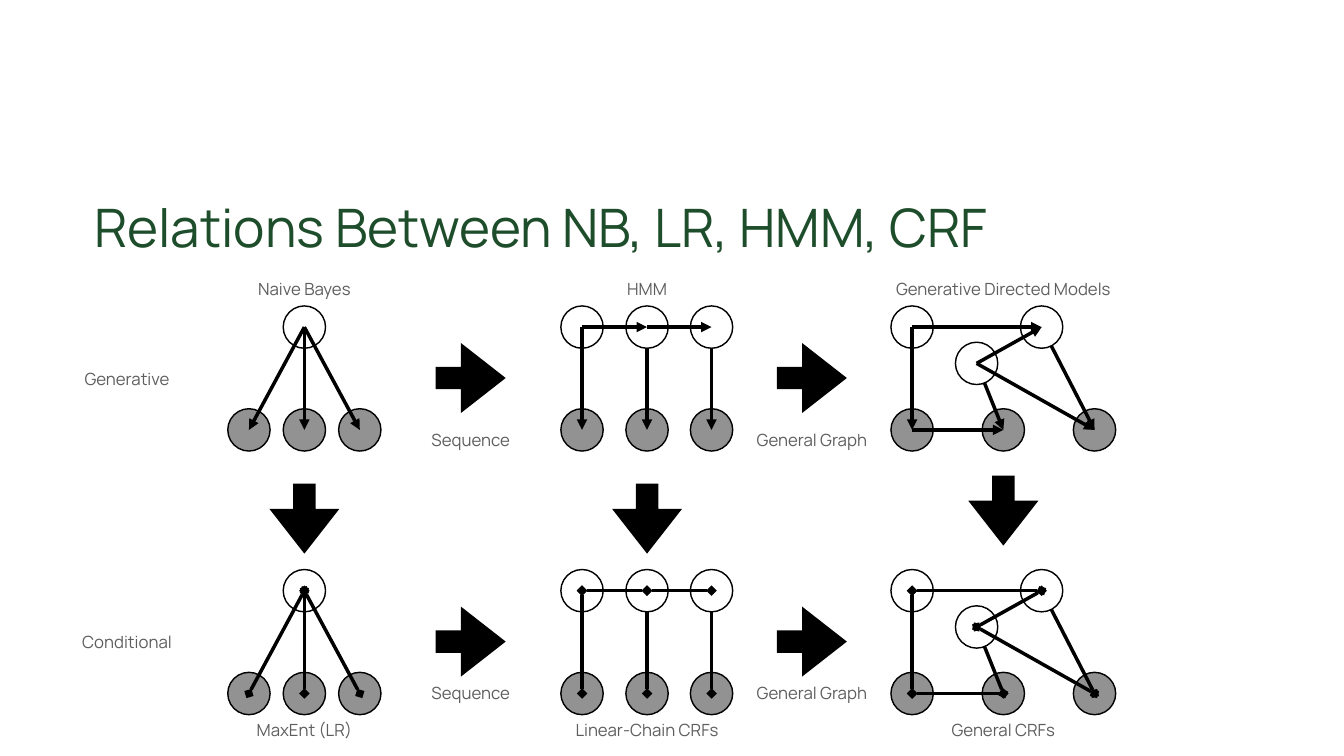
from lxml import etree
from pptx import Presentation
from pptx.dml.color import RGBColor
from pptx.enum import shapes as kinds, text as txt
from pptx.oxml.ns import qn
from pptx.util import Inches, Pt

KIND = kinds.MSO_SHAPE
SIZE = 0.84      # node diameter
BLOCK = 1.39     # block arrow size
DROP = 5.23      # from the generative row to the conditional row
TOP, MID, LOW = 6.49, 7.21, 8.53


def color(code):
    return RGBColor.from_string(code)


def add_solid(parent, kind, x, y, size, fill):
    """Add a filled square-framed shape centred on x, y."""
    shape = parent.add_shape(kind, Inches(x - size / 2), Inches(y - size / 2),
                             Inches(size), Inches(size))
    shape.shadow.inherit = False
    shape.fill.solid()
    shape.fill.fore_color.rgb = color(fill)
    return shape


prs = Presentation()
prs.slide_width, prs.slide_height = Inches(26.67), Inches(15)
slide = prs.slides.add_slide(prs.slide_layouts[5])

title = slide.shapes.title
place = {"left": 1.77, "top": 3.73, "width": 23.92, "height": 1.68}
for name, value in place.items():
    setattr(title, name, Inches(value))
frame = title.text_frame
frame.text = "Relations Between NB, LR, HMM, CRF"
frame.auto_size = txt.MSO_AUTO_SIZE.NONE
frame.vertical_anchor = txt.MSO_ANCHOR.MIDDLE
for side in ("left", "right", "top", "bottom"):
    setattr(frame, f"margin_{side}", Inches(0.1))
para = frame.paragraphs[0]
para.alignment = txt.PP_ALIGN.LEFT
para.line_spacing = 0.9
para.font.name, para.font.size = "Manrope", Pt(75.7)
para.font.color.rgb = color("1E4D2B")

# Each model is a list of layers, back to front: (nodes, edges between points)
root, bayes = (6.04, TOP), [(x, LOW) for x in (4.94, 6.04, 7.14)]
states = [(x, TOP) for x in (11.55, 12.84, 14.12)]
seen = [(x, LOW) for x in (11.55, 12.84, 14.12)]
start, inner, end = (18.1, TOP), (19.38, MID), (20.67, TOP)
left, center, right = [(x, LOW) for x in (18.1, 19.91, 21.72)]
models = [
    [([root] + bayes, [(root, leaf) for leaf in bayes])],
    [(states[:1] + seen, list(zip(states, seen))),
     (states[1:], list(zip(states, states[1:])))],
    [([start, left, center, right],
      [(inner, center), (end, right), (start, left)]),
     ([end, inner],
      [(start, end), (inner, end), (inner, right), (left, center)])],
]

rows = [(0, {"tailEnd": "triangle"}),
        (DROP, {"headEnd": "diamond", "tailEnd": "diamond"})]
for shift, tips in rows:
    for layers in models:
        group = slide.shapes.add_group_shape().shapes
        for nodes, edges in layers:
            for x, y in nodes:
                fill = "929292" if y == LOW else "FFFFFF"
                node = add_solid(group, KIND.OVAL, x, y + shift, SIZE, fill)
                node.line.color.rgb = color("000000")
                node.line.width = Pt(2)
            for (x1, y1), (x2, y2) in edges:
                edge = group.add_connector(
                    kinds.MSO_CONNECTOR.STRAIGHT, Inches(x1), Inches(y1 + shift),
                    Inches(x2), Inches(y2 + shift))
                edge.line.color.rgb = color("000000")
                edge.line.width = Pt(5)
                for tag, tip in tips.items():
                    etree.SubElement(edge.line._ln, qn(f"a:{tag}"), type=tip)
                etree.SubElement(edge._element.spPr, qn("a:effectLst"))

steps = [(x, 7.5 + shift, 0) for shift in (0, DROP) for x in (16.11, 9.34)]
steps += [(19.91, 10.13, 90), (6.04, 10.29, 90), (12.84, 10.29, 90)]
for x, y, turn in steps:
    arrow = add_solid(slide.shapes, KIND.RIGHT_ARROW, x, y, BLOCK, "000000")
    arrow.line.fill.background()
    arrow.rotation = turn
    arrow.adjustments[0], arrow.adjustments[1] = 0.32, 0.64

# Text, centre, top, width
labels = [
    ("Sequence", 9.34, 8.45, 1.8), ("General Graph", 16.11, 8.45, 2.58),
    ("Sequence", 9.34, 13.47, 1.8), ("General Graph", 16.11, 13.47, 2.58),
    ("Generative", 2.52, 7.23, 1.96), ("Conditional", 2.52, 12.45, 2.05),
    ("Naive Bayes", 6.04, 5.46, 2.15), ("HMM", 12.84, 5.46, 0.93),
    ("Generative Directed Models", 19.91, 5.46, 4.73),
    ("General CRFs", 19.91, 14.21, 2.33),
    ("Linear-Chain CRFs", 12.84, 14.21, 3.19), ("MaxEnt (LR)", 6.04, 14.21, 2.04),
]
for words, x, y, width in labels:
    box = slide.shapes.add_textbox(Inches(x - width / 2), Inches(y),
                                   Inches(width), Inches(0.56))
    frame = box.text_frame
    frame.text = words
    frame.word_wrap = False
    frame.auto_size = txt.MSO_AUTO_SIZE.SHAPE_TO_FIT_TEXT
    frame.vertical_anchor = txt.MSO_ANCHOR.MIDDLE
    for side in ("left", "right", "top", "bottom"):
        setattr(frame, f"margin_{side}", Inches(0.06))
    para = frame.paragraphs[0]
    para.alignment = txt.PP_ALIGN.CENTER
    para.font.name, para.font.size = "Manrope", Pt(24)
    para.font.color.rgb = color("5E5E5E")

prs.save("out.pptx")
